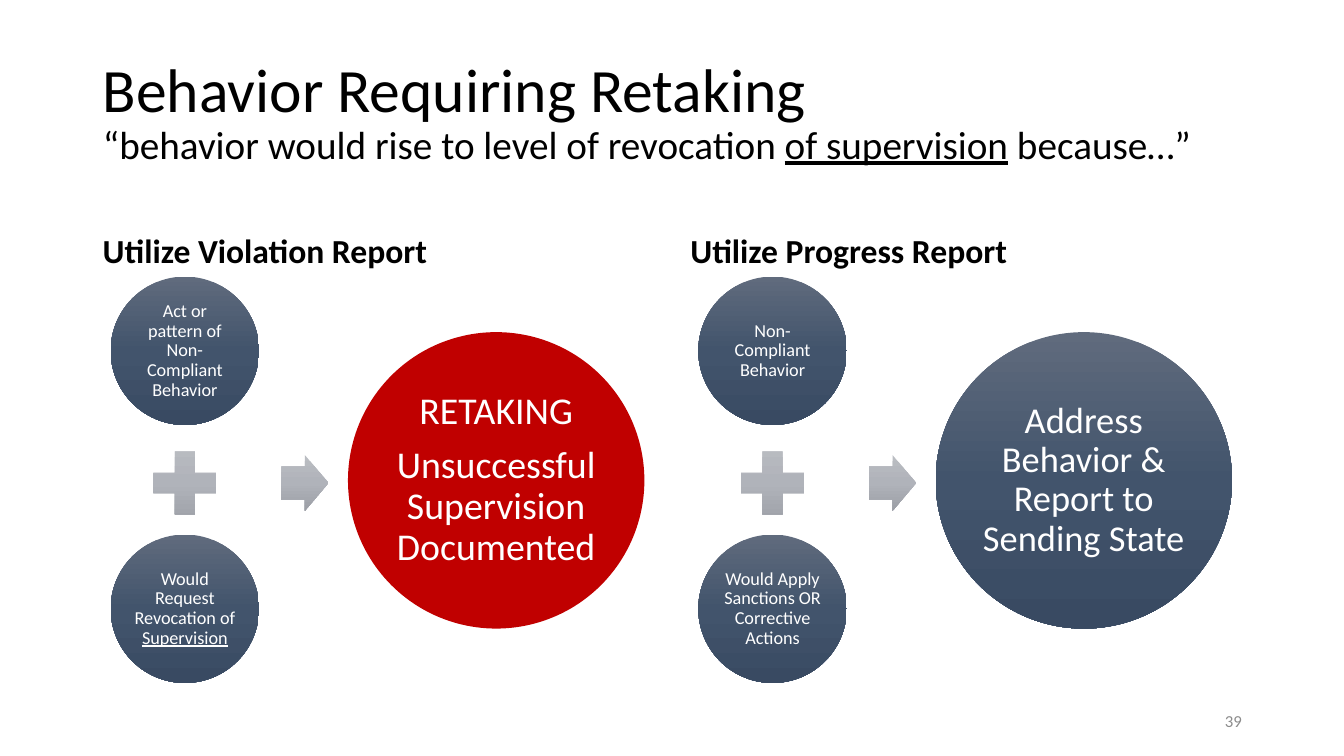
from copy import deepcopy

from pptx import Presentation
from pptx.dml.color import RGBColor
from pptx.enum.shapes import MSO_SHAPE
from pptx.enum.text import MSO_ANCHOR, MSO_AUTO_SIZE, PP_ALIGN
from pptx.oxml.ns import qn
from pptx.util import Cm, Pt

COLORS = {
    "text": "000000",
    "light": "FFFFFF",
    "retaking": "C00000",
    "number": "8C8C8C",
    "navy": ("606B7D", "42546C", "394A62"),
    "gray": ("BABDC2", "B0B3BA", "9C9FA6"),
}


def style(paragraph, size, color, align=PP_ALIGN.LEFT, spacing=0.9):
    paragraph.alignment = align
    paragraph.line_spacing = spacing
    paragraph.font.name = "Calibri"
    paragraph.font.size = Pt(size)
    paragraph.font.color.rgb = RGBColor.from_string(COLORS[color])


def add_part(kind, left, top, width, height, fill, lines=(), size=13, inset=0.05):
    """Add a diagram part; each line is a list of (text, underlined) runs."""
    part = slide.shapes.add_shape(kind, Cm(left), Cm(top), Cm(width), Cm(height))
    part.shadow.inherit = False
    part.line.fill.background()
    if fill == "retaking":
        part.fill.solid()
        part.fill.fore_color.rgb = RGBColor.from_string(COLORS[fill])
    else:
        # Three-stop gradient running from top to bottom
        part.fill.gradient()
        part.fill.gradient_angle = 270
        stops = part._element.spPr.find(qn("a:gradFill")).find(qn("a:gsLst"))
        stops.insert(1, deepcopy(stops[0]))
        for stop, color, position in zip(part.fill.gradient_stops, COLORS[fill], (0, 0.5, 1)):
            stop.color.rgb = RGBColor.from_string(color)
            stop.position = position
    frame = part.text_frame
    frame.word_wrap = True
    frame.vertical_anchor = MSO_ANCHOR.MIDDLE
    frame.margin_left = frame.margin_right = Cm(inset)
    frame.margin_top = frame.margin_bottom = Cm(inset)
    for index, runs in enumerate(lines):
        paragraph = frame.add_paragraph() if index else frame.paragraphs[0]
        style(paragraph, size, "light", PP_ALIGN.CENTER)
        if index < len(lines) - 1:
            paragraph.space_after = Pt(size * 0.35)
        for text, underlined in runs:
            run = paragraph.add_run()
            run.text = text
            if underlined:
                run.font.underline = True
    return part


prs = Presentation()
prs.slide_width, prs.slide_height = Cm(33.87), Cm(19.05)
slide = prs.slides.add_slide(prs.slide_layouts[5])

# Title with its quotation
title = slide.shapes.title
title.left, title.top, title.width, title.height = Cm(2.34), Cm(1.02), Cm(29.21), Cm(3.68)
title.text_frame.auto_size = MSO_AUTO_SIZE.NONE
title.text_frame.vertical_anchor = MSO_ANCHOR.MIDDLE
heading = title.text_frame.paragraphs[0]
style(heading, 28, "text")
topic = heading.add_run()
topic.text = "Behavior Requiring Retaking "
topic.font.size = Pt(44)
heading.add_line_break()
for text, underlined in (
    ("“behavior would rise to level of revocation ", False),
    ("of supervision", True),
    (" because…”", False),
):
    quote = heading.add_run()
    quote.text = text
    quote.font.underline = underlined

# Two reports: heading, two conditions and their outcome
reports = [
    ("Utilize Violation Report",
     [("Act or pattern of Non-Compliant Behavior", False)],
     [("Would Request Revocation of ", False), ("Supervision", True)],
     "retaking", 27,
     [[("RETAKING", False)], [("Unsuccessful Supervision Documented", False)]]),
    ("Utilize Progress Report",
     [("Non-Compliant Behavior", False)],
     [("Would Apply Sanctions OR Corrective Actions", False)],
     "navy", 26,
     [[("Address Behavior & Report to Sending State", False)]]),
]
REPORT_STEP = 14.81
for column, (name, behavior, response, fill, size, outcome) in enumerate(reports):
    shift = column * REPORT_STEP
    report = slide.shapes.add_textbox(Cm(2.34 + shift), Cm(4.67), Cm(14.35), Cm(2.29)).text_frame
    report.word_wrap = True
    report.vertical_anchor = MSO_ANCHOR.BOTTOM
    report.text = name
    style(report.paragraphs[0], 24, "text")
    report.paragraphs[0].font.bold = True

    for top, condition in ((6.97, behavior), (13.47, response)):
        add_part(MSO_SHAPE.OVAL, 2.79 + shift, top, 3.74, 3.74, "navy", [condition])
    add_part(MSO_SHAPE.MATH_PLUS, 3.58 + shift, 11.09, 2.16, 2.16, "gray")
    arrow = add_part(MSO_SHAPE.RIGHT_ARROW, 7.09 + shift, 11.47, 1.19, 1.4, "gray")
    arrow.adjustments[0] = 0.6
    add_part(MSO_SHAPE.OVAL, 8.77 + shift, 8.37, 7.47, 7.47, fill, outcome, size, 0.1)

# Slide number
number = slide.shapes.add_textbox(Cm(23.93), Cm(17.65), Cm(7.62), Cm(1.02)).text_frame
number.word_wrap = True
number.vertical_anchor = MSO_ANCHOR.MIDDLE
number.text = "39"
style(number.paragraphs[0], 12, "number", PP_ALIGN.RIGHT, 1.0)

prs.save("out.pptx")
